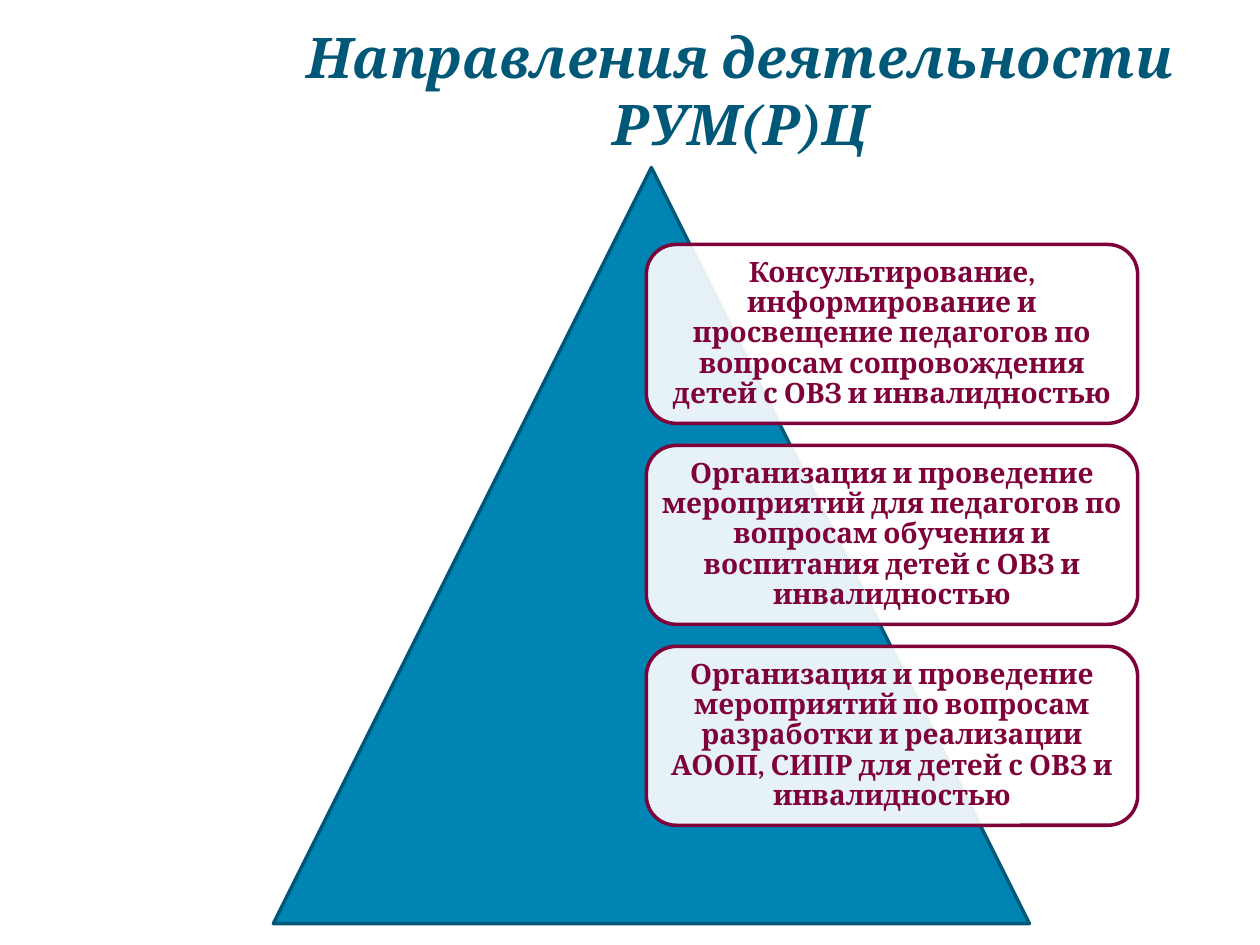
from dataclasses import dataclass

from lxml import etree
from pptx import Presentation
from pptx.dml.color import RGBColor
from pptx.enum.shapes import MSO_SHAPE as SHAPE
from pptx.enum.text import MSO_ANCHOR as ANCHOR, MSO_AUTO_SIZE as AUTO_SIZE, PP_ALIGN as ALIGN
from pptx.oxml.ns import qn
from pptx.util import Inches, Pt

WHITE = RGBColor(0xFF, 0xFF, 0xFF)
BLUE = RGBColor(0x00, 0x84, 0xB4)
NAVY = RGBColor(0x00, 0x58, 0x78)
MAROON = RGBColor(0x7F, 0x01, 0x3A)
FONT = "Cambria"


@dataclass
class Box:
    left: float
    top: float
    width: float
    height: float

    def emu(self):
        return [Inches(v) for v in (self.left, self.top, self.width, self.height)]


TITLE_BOX = Box(2, 0.25, 7.75, 0.92)
PYRAMID_BOX = Box(2.17, 1.33, 6, 6)
FIRST_CARD = Box(5.13, 1.94, 3.9, 1.42)
CARD_STEP = 1.595
DIRECTIONS = [
    "Консультирование, информирование и просвещение педагогов по вопросам "
    "сопровождения детей с ОВЗ и инвалидностью",
    "Организация и проведение мероприятий для педагогов по вопросам обучения "
    "и воспитания детей с ОВЗ и инвалидностью",
    "Организация и проведение мероприятий по вопросам разработки и реализации "
    "АООП, СИПР для детей с ОВЗ и инвалидностью",
]


def write(sp, text: str, *, size: float, color: RGBColor, italic: bool = False,
          spacing: float = 1.0) -> None:
    tf = sp.text_frame
    tf.word_wrap = True
    tf.auto_size = AUTO_SIZE.NONE
    tf.vertical_anchor = ANCHOR.MIDDLE
    p = tf.paragraphs[0]
    p.alignment = ALIGN.CENTER
    p.line_spacing = spacing
    r = p.add_run()
    r.text = text
    font = r.font
    font.name, font.size, font.bold, font.italic = FONT, Pt(size), True, italic
    font.color.rgb = color


def add_outlined(shapes, kind: SHAPE, box: Box, fill: RGBColor, line: RGBColor):
    sp = shapes.add_shape(kind, *box.emu())
    sp.shadow.inherit = False
    sp.fill.solid()
    sp.fill.fore_color.rgb = fill
    sp.line.color.rgb = line
    sp.line.width = Pt(2)
    return sp


def set_opacity(sp, percent: int) -> None:
    color = sp._element.spPr.find(qn("a:solidFill"))[0]
    etree.SubElement(color, qn("a:alpha")).set("val", str(percent * 1000))


def add_card(shapes, box: Box, text: str) -> None:
    sp = add_outlined(shapes, SHAPE.ROUNDED_RECTANGLE, box, WHITE, MAROON)
    set_opacity(sp, 90)
    tf = sp.text_frame
    # The rounded corners already inset the text by 0.07 inch
    tf.margin_left = tf.margin_top = tf.margin_right = tf.margin_bottom = 0
    write(sp, text, size=16, color=MAROON, spacing=0.9)


def main() -> None:
    prs = Presentation()
    prs.slide_width, prs.slide_height = Inches(10), Inches(7.5)
    s = prs.slides.add_slide(prs.slide_layouts[5])

    title = s.shapes.title
    title.left, title.top, title.width, title.height = TITLE_BOX.emu()
    write(title, "Направления деятельности РУМ(Р)Ц", size=32, color=NAVY, italic=True)

    group = s.shapes.add_group_shape()
    add_outlined(group.shapes, SHAPE.ISOSCELES_TRIANGLE, PYRAMID_BOX, BLUE, NAVY)
    for i, text in enumerate(DIRECTIONS):
        box = Box(FIRST_CARD.left, FIRST_CARD.top + i * CARD_STEP,
                  FIRST_CARD.width, FIRST_CARD.height)
        add_card(group.shapes, box, text)

    prs.save("out.pptx")


if __name__ == "__main__":
    main()
